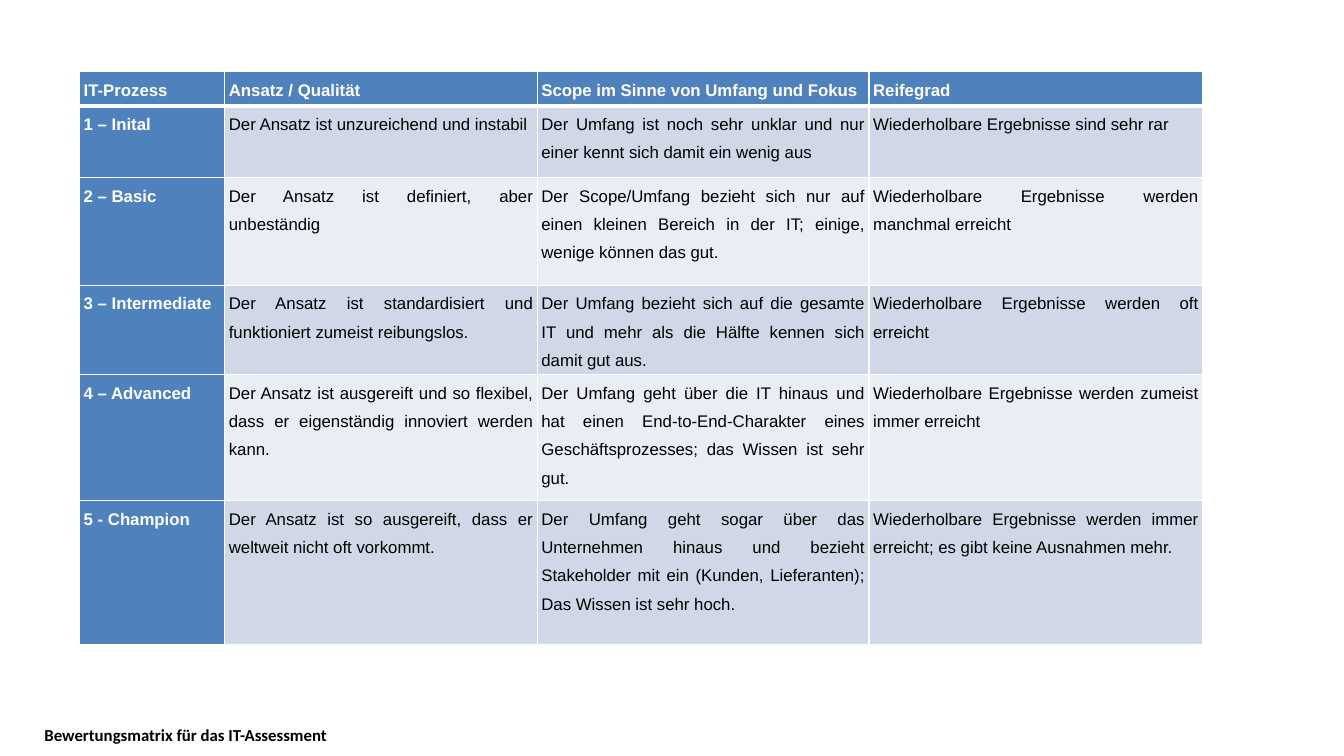
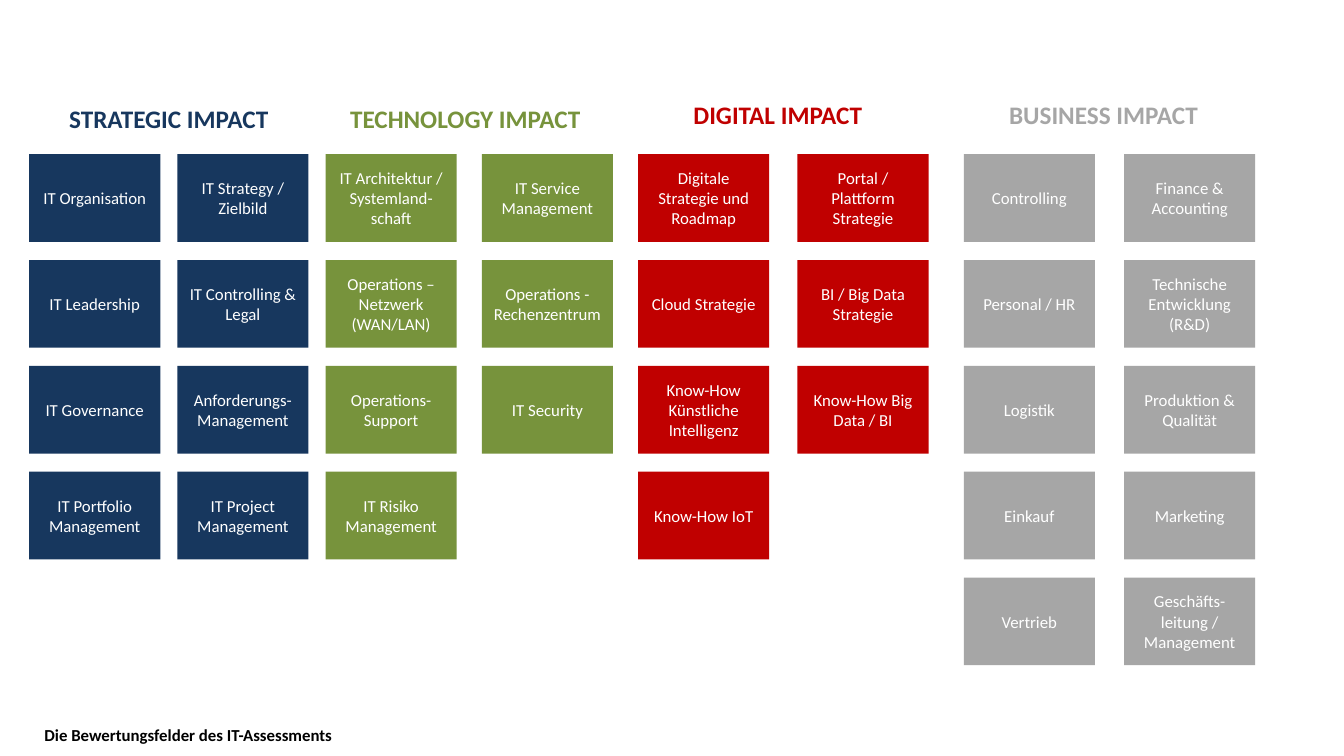
from dataclasses import dataclass

from lxml import etree
from pptx import Presentation
from pptx import util as u
from pptx.dml.color import RGBColor
from pptx.enum import shapes, text
from pptx.oxml.ns import qn


@dataclass(frozen=True)
class Theme:
    white: str = "FFFFFF"
    black: str = "000000"
    head: str = "4F81BD"
    bands: tuple = ("D0D8E8", "E9EDF4")
    navy: str = "17375E"
    green: str = "77933C"
    red: str = "C00000"
    grey: str = "A6A6A6"
    sans: str = "Calibri"
    grid: str = "Arial"
    small: int = 12
    large: int = 18


T = Theme()

# Table content
WIDTHS = (1.44, 3.1, 3.29, 3.31)
HEIGHTS = (0.34, 0.71, 1.07, 0.89, 1.25, 1.43)
ROWS = (
    ("IT-Prozess", "Ansatz / Qualität",
     "Scope im Sinne von Umfang und Fokus", "Reifegrad"),
    ("1 – Inital", "Der Ansatz ist unzureichend und instabil",
     "Der Umfang ist noch sehr unklar und nur einer kennt sich damit "
     "ein wenig aus",
     "Wiederholbare Ergebnisse sind sehr rar"),
    ("2 – Basic", "Der Ansatz ist definiert, aber unbeständig",
     "Der Scope/Umfang bezieht sich nur auf einen kleinen Bereich in der IT; "
     "einige, wenige können das gut.",
     "Wiederholbare Ergebnisse werden manchmal erreicht"),
    ("3 – Intermediate",
     "Der Ansatz ist standardisiert und funktioniert zumeist reibungslos.",
     "Der Umfang bezieht sich auf die gesamte IT und mehr als die Hälfte "
     "kennen sich damit gut aus.",
     "Wiederholbare Ergebnisse werden oft erreicht"),
    ("4 – Advanced",
     "Der Ansatz ist ausgereift und so flexibel, dass er eigenständig "
     "innoviert werden kann.",
     "Der Umfang geht über die IT hinaus und hat einen "
     "End-to-End-Charakter eines Geschäftsprozesses; das Wissen ist sehr gut.",
     "Wiederholbare Ergebnisse werden zumeist immer erreicht"),
    ("5 - Champion",
     "Der Ansatz ist so ausgereift, dass er weltweit nicht oft vorkommt.",
     "Der Umfang geht sogar über das Unternehmen hinaus und bezieht "
     "Stakeholder mit ein (Kunden, Lieferanten); Das Wissen ist sehr hoch.",
     "Wiederholbare Ergebnisse werden immer erreicht; "
     "es gibt keine Ausnahmen mehr."),
)

# Impact groups: left, top, column step, colour, heading, two tile columns
GROUPS = (
    (0.29, 0.98, 1.47, T.navy, "STRATEGIC IMPACT",
     (("IT Organisation", "IT Leadership", "IT Governance",
       "IT Portfolio Management"),
      ("IT Strategy / Zielbild", "IT Controlling & Legal",
       "Anforderungs-Management", "IT Project Management"))),
    (3.23, 0.98, 1.55, T.green, "TECHNOLOGY IMPACT",
     (("IT Architektur / Systemland-schaft", "Operations – Netzwerk (WAN/LAN)",
       "Operations- Support", "IT Risiko Management"),
      ("IT Service Management", "Operations - Rechenzentrum",
       "IT Security"))),
    (6.33, 0.94, 1.58, T.red, "DIGITAL IMPACT",
     (("Digitale Strategie und Roadmap", "Cloud Strategie",
       "Know-How Künstliche Intelligenz", "Know-How IoT"),
      ("Portal / Plattform Strategie", "BI / Big Data Strategie",
       "Know-How Big Data / BI"))),
    (9.56, 0.94, 1.59, T.grey, "BUSINESS IMPACT",
     (("Controlling", "Personal / HR", "Logistik", "Einkauf", "Vertrieb"),
      ("Finance & Accounting", "Technische Entwicklung (R&D)",
       "Produktion & Qualität", "Marketing",
       "Geschäfts-leitung / Management"))),
)
TILE_TOP, TILE_STEP = 1.53, 1.05
TILE_W, TILE_H = 1.3, 0.87


def inch(*vals):
    return [u.Inches(v) for v in vals]


def paint(item, hue):
    item.fill.solid()
    item.fill.fore_color.rgb = RGBColor.from_string(hue)


def write(frame, words, hue, size=T.small, bold=False, font=T.sans,
          align=text.PP_ALIGN.CENTER):
    frame.word_wrap = True
    frame.text = words
    para = frame.paragraphs[0]
    para.alignment = align
    for run in para.runs:
        face = run.font
        face.name, face.size, face.bold = font, u.Pt(size), bold
        face.color.rgb = RGBColor.from_string(hue)
    return para


def edge(cell, base):
    """White cell borders, added ahead of the fill as the schema asks."""
    props = cell._tc.get_or_add_tcPr()
    for spot, side in enumerate("LRTB"):
        width = base if side == "B" else 1
        line = etree.Element(qn(f"a:ln{side}"), w=str(u.Pt(width)))
        fill = etree.SubElement(line, qn("a:solidFill"))
        etree.SubElement(fill, qn("a:srgbClr"), val=T.white)
        props.insert(spot, line)


def add_page(deck, title):
    """Slide with its caption in the title placeholder."""
    page = deck.slides.add_slide(deck.slide_layouts[5])
    box = page.shapes.title
    box.left, box.top, box.width, box.height = inch(0.34, 7.16, 3.86, 0.34)
    frame = box.text_frame
    frame.auto_size = text.MSO_AUTO_SIZE.NONE
    frame.vertical_anchor = text.MSO_ANCHOR.TOP
    para = write(frame, title, T.black, bold=True, align=text.PP_ALIGN.LEFT)
    para.line_spacing = 0.9
    return page


def add_grid(page, left, top):
    """Rating table with header row and header column."""
    box = inch(left, top, sum(WIDTHS), sum(HEIGHTS))
    grid = page.shapes.add_table(len(ROWS), len(WIDTHS), *box).table
    for col, width in zip(grid.columns, WIDTHS):
        col.width = u.Inches(width)
    for r, (row, height) in enumerate(zip(ROWS, HEIGHTS)):
        grid.rows[r].height = u.Inches(height)
        for c, words in enumerate(row):
            cell = grid.cell(r, c)
            head = r == 0 or c == 0
            cell.margin_left = cell.margin_right = u.Inches(0.04)
            cell.margin_top = cell.margin_bottom = 0
            paint(cell, T.head if head else T.bands[(r - 1) % 2])
            edge(cell, 3 if r == 0 else 1)
            para = write(cell.text_frame, words, T.white if head else T.black,
                         bold=head, font=T.grid, align=text.PP_ALIGN.JUSTIFY)
            para.line_spacing = 1.5
            para.space_before = para.space_after = u.Pt(3)


def add_tile(page, left, top, hue, words):
    tile = page.shapes.add_shape(shapes.MSO_SHAPE.RECTANGLE,
                                 *inch(left, top, TILE_W, TILE_H))
    tile.shadow.inherit = False
    paint(tile, hue)
    tile.line.fill.background()
    tile.text_frame.vertical_anchor = text.MSO_ANCHOR.MIDDLE
    write(tile.text_frame, words, T.white)


def add_group(page, left, top, step, hue, title, cols):
    """Heading above two columns of tiles."""
    label = page.shapes.add_textbox(*inch(left, top, 2.77, 0.4))
    write(label.text_frame, title, hue, T.large, bold=True)
    for c, names in enumerate(cols):
        for r, words in enumerate(names):
            add_tile(page, left + c * step, TILE_TOP + r * TILE_STEP,
                     hue, words)


def main():
    deck = Presentation()
    deck.slide_width, deck.slide_height = inch(13.33, 7.5)

    # Rating matrix
    page = add_page(deck, "Bewertungsmatrix für das IT-Assessment")
    add_grid(page, 0.79, 0.71)

    # Rating fields
    page = add_page(deck, "Die Bewertungsfelder des IT-Assessments")
    for group in GROUPS:
        add_group(page, *group)

    deck.save("out.pptx")


if __name__ == "__main__":
    main()
